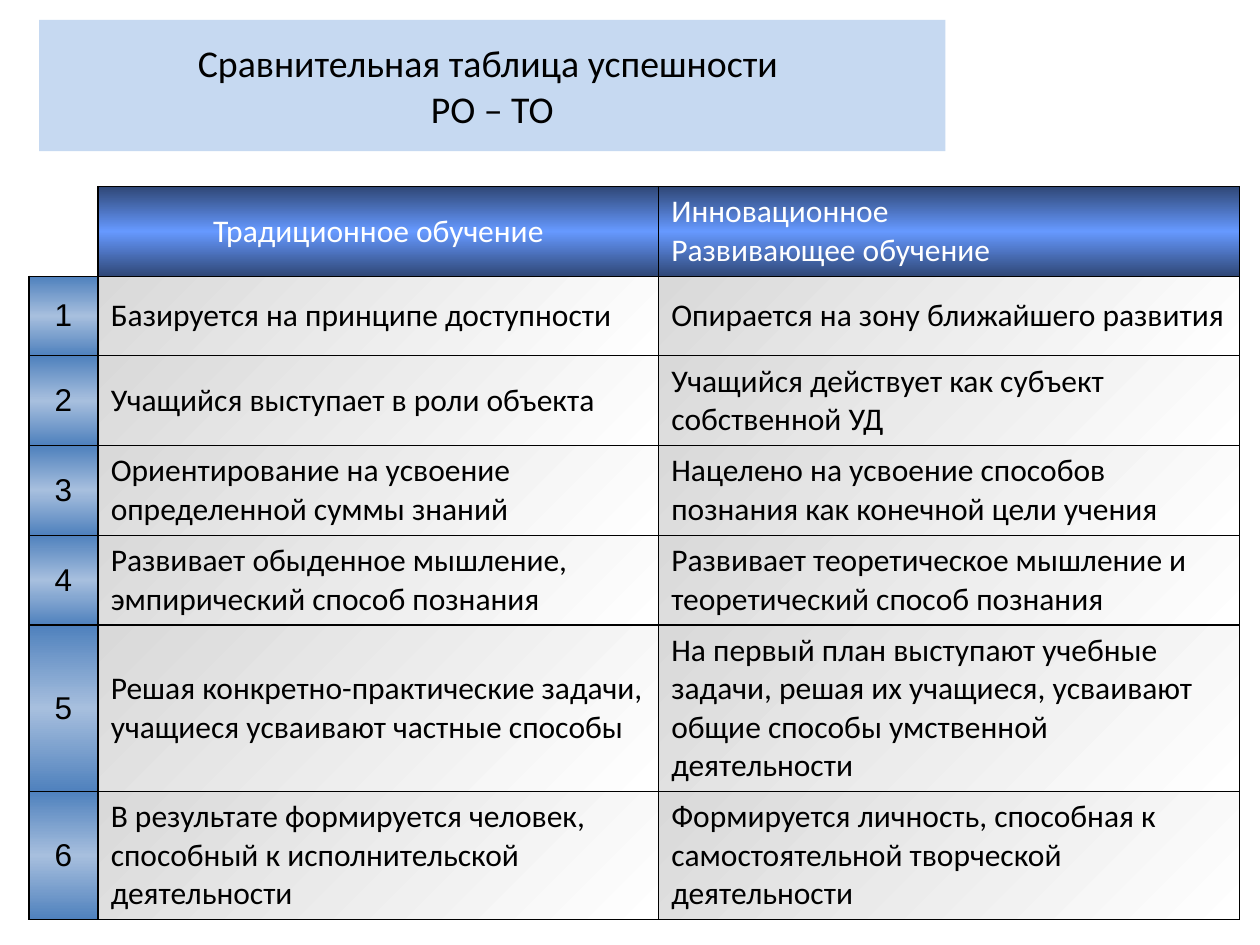
from lxml import etree
from pptx import Presentation
from pptx.dml.color import RGBColor
from pptx.enum import shapes, text
from pptx.oxml.ns import qn
from pptx.util import Cm, Pt

LEFT, CENTER = text.PP_ALIGN.LEFT, text.PP_ALIGN.CENTER
HEADER = (["2F4776", "6699FF", "2F4776"], 90)
NUMBER = (["4F81BD", "A7BFDE", "4F81BD"], 90)
BODY = (["D9D9D9", "FFFFFF"], 45)


def write(frame, wording, align, **font):
    """Put one paragraph per line, all in the same format."""
    frame.text = wording
    for para in frame.paragraphs:
        para.alignment = align
        for span in para.runs:
            span.font.color.rgb = RGBColor.from_string(font["color"])
            for name in ("name", "size"):
                setattr(span.font, name, font[name])


def paint(cell, sides, gradient):
    """Draw black borders on the given sides, then the gradient."""
    props = cell._tc.get_or_add_tcPr()
    for side in sides:
        line = etree.SubElement(props, qn("a:ln" + side), w=str(Pt(1)))
        fill = etree.SubElement(line, qn("a:solidFill"))
        etree.SubElement(fill, qn("a:srgbClr"), val="000000")
    if not gradient:
        cell.fill.background()
        return
    colors, angle = gradient
    fill = etree.SubElement(props, qn("a:gradFill"), rotWithShape="1")
    stops = etree.SubElement(fill, qn("a:gsLst"))
    for index, color in enumerate(colors):
        position = index * 100000 // (len(colors) - 1)
        stop = etree.SubElement(stops, qn("a:gs"), pos=str(position))
        etree.SubElement(stop, qn("a:srgbClr"), val=color)
    etree.SubElement(fill, qn("a:lin"), ang=str(angle * 60000), scaled="1")


deck = Presentation()
deck.slide_width, deck.slide_height = Cm(25.4), Cm(19.05)
page = deck.slides.add_slide(deck.slide_layouts[6])

# Title band
box = page.shapes.add_shape(shapes.MSO_SHAPE.RECTANGLE,
                            Cm(0.79), Cm(0.4), Cm(18.27), Cm(2.65))
box.shadow.inherit = False
box.fill.solid()
box.fill.fore_color.rgb = RGBColor.from_string("C6D9F1")
box.line.fill.background()
box.text_frame.vertical_anchor = text.MSO_ANCHOR.MIDDLE
write(box.text_frame, "Сравнительная таблица успешности \nРО – ТО", CENTER,
      name="Calibri", size=Pt(21.6), color="000000")

# Comparison table
rows = [
    ("", "Традиционное обучение", "Инновационное\nРазвивающее обучение"),
    ("1", "Базируется на принципе доступности",
     "Опирается на зону ближайшего развития"),
    ("2", "Учащийся выступает в роли объекта",
     "Учащийся действует как субъект собственной УД"),
    ("3", "Ориентирование на усвоение определенной суммы знаний",
     "Нацелено на усвоение способов познания как конечной цели учения"),
    ("4", "Развивает обыденное мышление, эмпирический способ познания",
     "Развивает теоретическое мышление и теоретический способ познания"),
    ("5", "Решая конкретно-практические задачи, учащиеся усваивают частные способы",
     "На первый план выступают учебные задачи, решая их учащиеся, усваивают "
     "общие способы умственной деятельности"),
    ("6", "В результате формируется человек, способный к исполнительской деятельности",
     "Формируется личность, способная к самостоятельной творческой деятельности"),
]
widths = [1.4, 11.3, 11.71]
heights = [1.81, 1.6, 1.81, 1.81, 1.81, 3.35, 2.58]
table = page.shapes.add_table(len(rows), len(widths), Cm(0.58), Cm(3.76),
                              Cm(sum(widths)), Cm(sum(heights))).table
table.first_row = table.horz_banding = False
for column, width in zip(table.columns, widths):
    column.width = Cm(width)
for row, height in zip(table.rows, heights):
    row.height = Cm(height)

for r, wordings in enumerate(rows):
    for c, wording in enumerate(wordings):
        cell = table.cell(r, c)
        cell.vertical_anchor = text.MSO_ANCHOR.MIDDLE
        if r == 0 and c == 0:
            paint(cell, "RB", None)
            continue
        paint(cell, "LRTB", HEADER if r == 0 else NUMBER if c == 0 else BODY)
        centered = c == 0 or (r == 0 and c == 1)
        write(cell.text_frame, wording, CENTER if centered else LEFT,
              name="Arial" if c == 0 else "Calibri", size=Pt(18),
              color="FFFFFF" if r == 0 else "000000")

deck.save("out.pptx")
